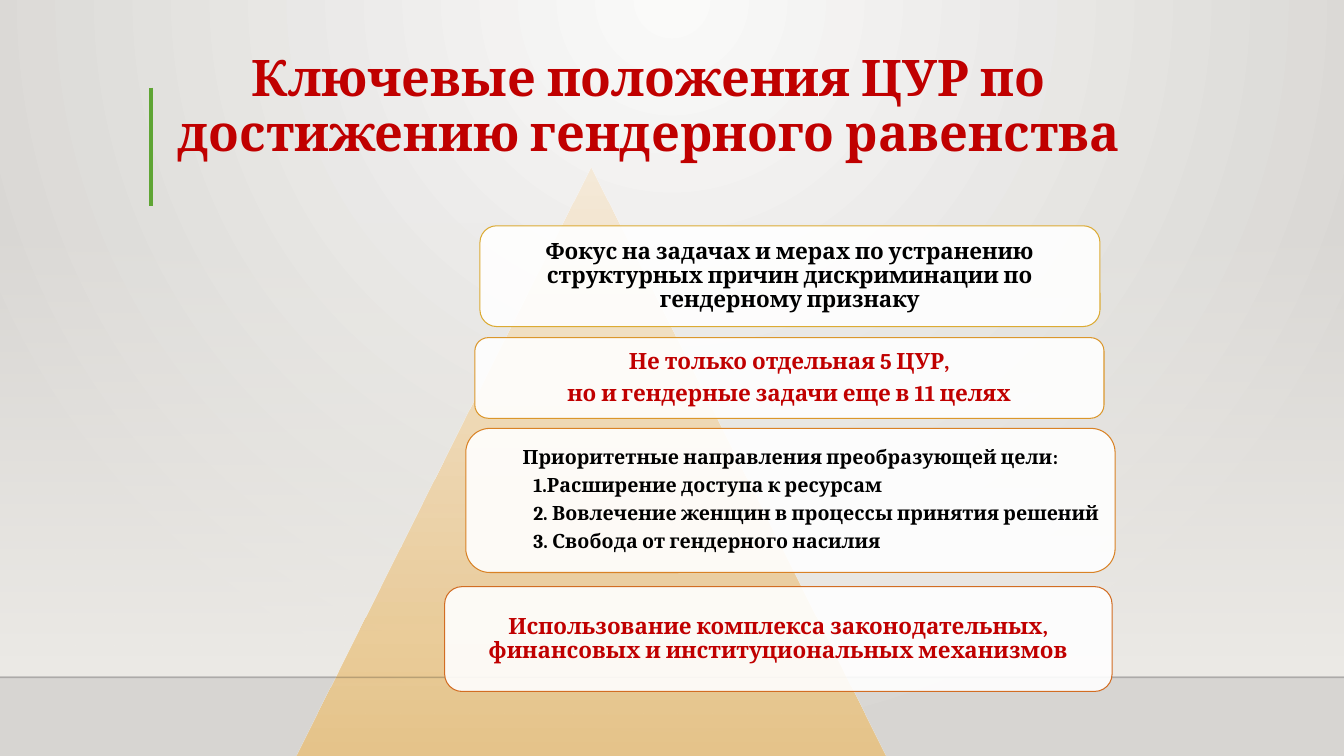
"""Builds the slide on the key gender equality provisions of the SDGs."""
from lxml import etree
from pptx import Presentation, util as u
from pptx.dml.color import RGBColor
from pptx.enum import shapes, text
from pptx.oxml.ns import qn

PX = 9144
FONT = "Cambria"
COLORS = {
    "red": "C00000", "black": "000000", "white": "FFFFFF", "green": "5FA534",
    "horizon": "000001", "haze": "EDEBE7", "glow": "FAFAF9", "edge": "D7D5D2",
    "peak": "F6EAD9", "base": "E8C385", "gold": "DCAB34", "amber": "DB972C",
    "orange": "D98225", "rust": "D26D23",
}


def blend(fill, names):
    fill.gradient()
    for stop, name in zip(fill.gradient_stops, names):
        stop.color.rgb = RGBColor.from_string(COLORS[name])


def fade(item, opacities):
    for color, opacity in zip(item._element.iter(qn("a:srgbClr")), opacities):
        etree.SubElement(color, qn("a:alpha"), val=str(opacity * 1000))


deck = Presentation()
deck.slide_width, deck.slide_height = 1333 * PX, 750 * PX
page = deck.slides.add_slide(deck.slide_layouts[6])

blend(page.background.fill, ["glow", "edge"])
linear = next(page._element.iter(qn("a:lin")))
radial = etree.Element(qn("a:path"), path="circle")
etree.SubElement(radial, qn("a:fillToRect"), l="43000", t="0", r="43000", b="100000")
linear.getparent().replace(linear, radial)

SHAPE = shapes.MSO_SHAPE
backdrops = [
    (SHAPE.RECTANGLE, (0, 220, 1333, 450), ["haze", "haze"], [0, 100]),
    (SHAPE.ISOSCELES_TRIANGLE, (294, 166, 584, 584), ["peak", "base"], [100, 92]),
]
for kind, place, names, opacities in backdrops:
    backdrop = page.shapes.add_shape(kind, *[side * PX for side in place])
    backdrop.shadow.inherit = False
    backdrop.line.fill.background()
    blend(backdrop.fill, names)
    backdrop.fill.gradient_angle = 270
    fade(backdrop, opacities)

rules = [
    ((0, 672, 1333, 672), "horizon", 1, 20),
    ((150, 87, 150, 204), "green", 3, 100),
]
for ends, name, width, opacity in rules:
    rule = page.shapes.add_connector(
        shapes.MSO_CONNECTOR.STRAIGHT, *[end * PX for end in ends])
    rule.line.color.rgb = RGBColor.from_string(COLORS[name])
    rule.line.width = u.Pt(width)
    fade(rule, [opacity])
    etree.SubElement(rule._element.spPr, qn("a:effectLst"))

title = page.shapes.add_textbox(112 * PX, 41 * PX, 1063 * PX, 125 * PX)
title.text_frame.word_wrap = True
title.text_frame.vertical_anchor = text.MSO_ANCHOR.BOTTOM
para = title.text_frame.paragraphs[0]
para.text = "Ключевые положения ЦУР по достижению гендерного равенства"
para.alignment = text.PP_ALIGN.CENTER
para.line_spacing = 0.9
para.font.name, para.font.size, para.font.bold = FONT, u.Pt(36), True
para.font.color.rgb = RGBColor.from_string(COLORS["red"])

cards = [
    ((476, 224, 615, 100), "gold", "black", 16, 7, [
        "Фокус на задачах и мерах по устранению структурных причин "
        "дискриминации по гендерному признаку"]),
    ((471, 335, 624, 80), "amber", "red", 16, 7, [
        "Не только отдельная 5 ЦУР,",
        "но и гендерные задачи еще в 11 целях"]),
    ((462, 425, 644, 143), "orange", "black", 14, 6, [
        "Приоритетные направления преобразующей цели:",
        "1.Расширение доступа к ресурсам",
        "2. Вовлечение женщин в процессы принятия решений",
        "3. Свобода от гендерного насилия"]),
    ((441, 582, 662, 104), "rust", "red", 16, 7, [
        "Использование комплекса законодательных, финансовых и "
        "институциональных механизмов"]),
]
for place, outline, ink, size, inset, lines in cards:
    card = page.shapes.add_shape(
        SHAPE.ROUNDED_RECTANGLE, *[side * PX for side in place])
    card.shadow.inherit = False
    card.fill.solid()
    card.fill.fore_color.rgb = RGBColor.from_string(COLORS["white"])
    card.line.color.rgb = RGBColor.from_string(COLORS[outline])
    card.line.width = u.Pt(0.75)
    fade(card, [90])
    frame = card.text_frame
    frame.word_wrap = True
    frame.vertical_anchor = text.MSO_ANCHOR.MIDDLE
    frame.margin_left = frame.margin_right = inset * PX
    frame.margin_top = frame.margin_bottom = inset * PX
    frame.text = "\n".join(lines)
    for para in frame.paragraphs:
        numbered = para.text[0].isdigit()
        if numbered:
            para._p.get_or_add_pPr().set("marL", str(54 * PX))
        para.alignment = text.PP_ALIGN.JUSTIFY if numbered else text.PP_ALIGN.CENTER
        para.line_spacing = 0.9
        para.space_after = u.Pt(size * 0.35)
        para.font.name, para.font.size, para.font.bold = FONT, u.Pt(size), True
        para.font.color.rgb = RGBColor.from_string(COLORS[ink])

deck.save("out.pptx")
